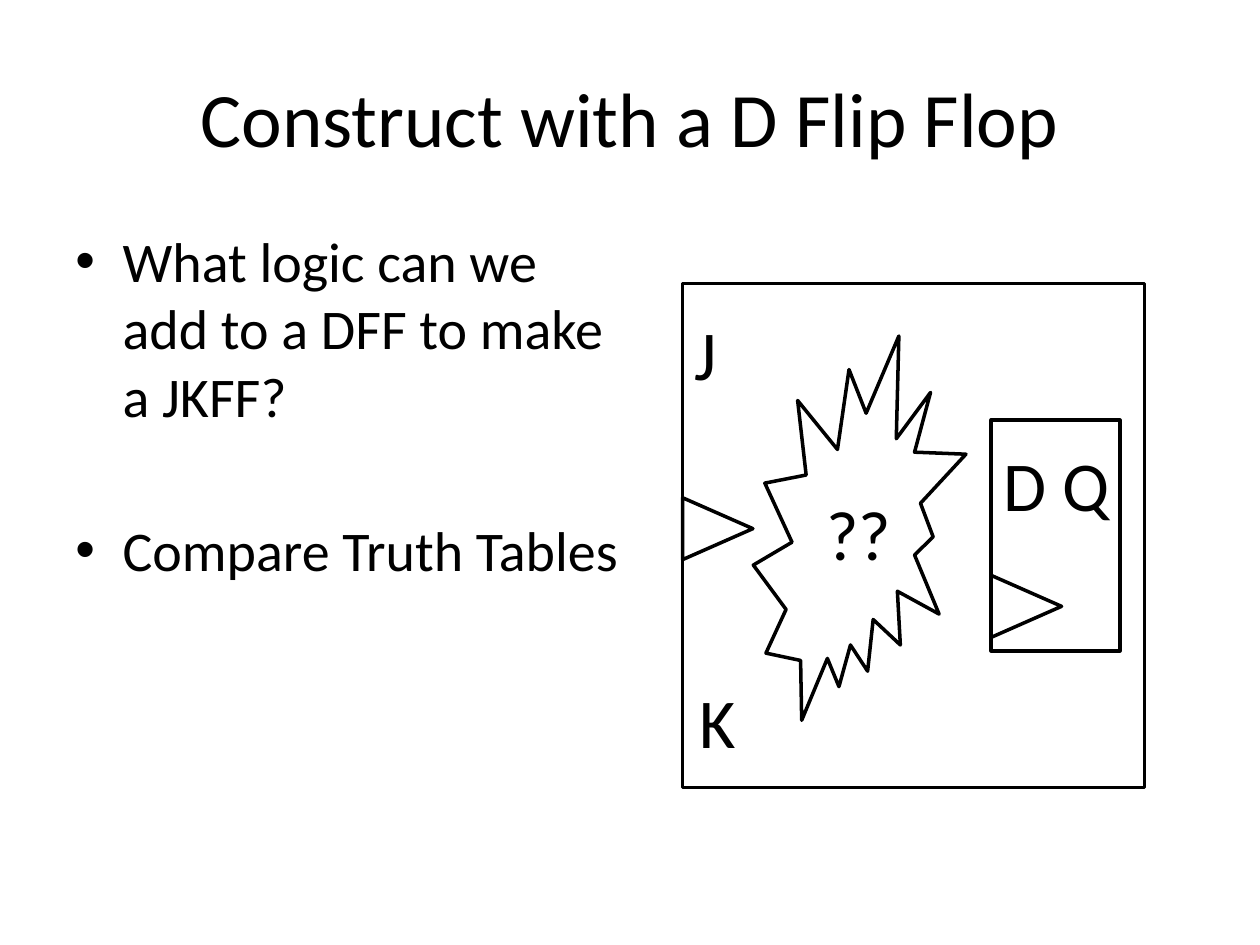
from dataclasses import dataclass

from lxml import etree
from pptx import Presentation
from pptx.dml.color import RGBColor
from pptx.enum.shapes import MSO_SHAPE
from pptx.enum.text import MSO_ANCHOR, PP_ALIGN
from pptx.oxml.ns import qn
from pptx.util import Emu, Inches, Pt

RECTANGLE = MSO_SHAPE.RECTANGLE
TRIANGLE = MSO_SHAPE.ISOSCELES_TRIANGLE
BURST = MSO_SHAPE.EXPLOSION2
TOP, MIDDLE = MSO_ANCHOR.TOP, MSO_ANCHOR.MIDDLE
LEFT, CENTER = PP_ALIGN.LEFT, PP_ALIGN.CENTER

CELL = Inches(1) // 12  # the page is a grid of 120 columns by 90 rows


@dataclass(frozen=True)
class Theme:
    font: str = "Calibri"
    ink: RGBColor = RGBColor(0, 0, 0)
    paper: RGBColor = RGBColor(255, 255, 255)
    title_size: int = 44
    bullet_size: int = 32
    label_size: int = 40
    outline: int = 2
    bullet_indent: float = 4.5


@dataclass(frozen=True)
class Area:
    column: float
    row: float
    columns: float
    rows: float

    def lengths(self) -> list[Emu]:
        return [Emu(int(value * CELL))
                for value in (self.column, self.row, self.columns, self.rows)]


@dataclass(frozen=True)
class Symbol:
    kind: MSO_SHAPE
    area: Area
    filled: bool = True
    rotation: int = 0


@dataclass(frozen=True)
class Label:
    text: str
    area: Area


@dataclass(frozen=True)
class Bullet:
    text: str
    space_before: int


THEME = Theme()
LABEL_ROWS = 9.2


def clock_input(column: float, row: float) -> Symbol:
    """Triangle pointing right, placed by its box before rotation."""
    return Symbol(TRIANGLE, Area(column, row, 5.9, 6.7), rotation=90)


CIRCUIT = (
    Symbol(RECTANGLE, Area(65, 27, 44, 48), filled=False),
    Label("J", Area(65, 29, 4.6, LABEL_ROWS)),
    Label("K", Area(65.4, 64, 5.9, LABEL_ROWS)),
    clock_input(65.4, 47),
    Symbol(RECTANGLE, Area(94.4, 40, 12.25, 22), filled=False),
    Label("D Q", Area(94.4, 41.5, 12.6, LABEL_ROWS)),
    clock_input(94.8, 54.4),
    Symbol(BURST, Area(71.75, 32, 20.25, 36.6)),
    Label("??", Area(77.5, 46.1, 8.6, LABEL_ROWS)),
)

BULLETS = (
    Bullet("What logic can we add to a DFF to make a JKFF?", 6),
    Bullet("Compare Truth Tables", 50),
)


def add_text(page, area: Area, lines: list[str], size: int, align=LEFT,
             anchor=TOP, wrap: bool = True):
    frame = page.shapes.add_textbox(*area.lengths()).text_frame
    frame.word_wrap = wrap
    frame.vertical_anchor = anchor
    frame.text = "\n".join(lines)
    for para in frame.paragraphs:
        para.alignment = align
        for span in para.runs:
            span.font.name = THEME.font
            span.font.size = Pt(size)
            span.font.color.rgb = THEME.ink
    return frame


def add_bullets(page, area: Area, bullets: tuple[Bullet, ...]) -> None:
    frame = add_text(page, area, [bullet.text for bullet in bullets],
                     THEME.bullet_size)
    indent = int(THEME.bullet_indent * CELL)
    for para, bullet in zip(frame.paragraphs, bullets):
        para.space_before = Pt(bullet.space_before)
        properties = para._p.get_or_add_pPr()
        properties.set("marL", str(indent))
        properties.set("indent", str(-indent))
        etree.SubElement(properties, qn("a:buFont"), typeface="Arial")
        etree.SubElement(properties, qn("a:buChar"), char="•")


def add_symbol(page, symbol: Symbol) -> None:
    shape = page.shapes.add_shape(symbol.kind, *symbol.area.lengths())
    shape.shadow.inherit = False
    shape.rotation = symbol.rotation
    shape.line.color.rgb = THEME.ink
    shape.line.width = Pt(THEME.outline)
    if symbol.filled:
        shape.fill.solid()
        shape.fill.fore_color.rgb = THEME.paper
    else:
        shape.fill.background()


def main() -> None:
    deck = Presentation()
    deck.slide_width, deck.slide_height = Inches(10), Inches(7.5)
    page = deck.slides.add_slide(deck.slide_layouts[6])

    add_text(page, Area(6, 3.6, 108, 15), ["Construct with a D Flip Flop"],
             THEME.title_size, CENTER, MIDDLE)
    add_bullets(page, Area(6, 21, 55, 59.4), BULLETS)
    for part in CIRCUIT:
        if isinstance(part, Symbol):
            add_symbol(page, part)
        else:
            add_text(page, part.area, [part.text], THEME.label_size, wrap=False)

    deck.save("out.pptx")


if __name__ == "__main__":
    main()
